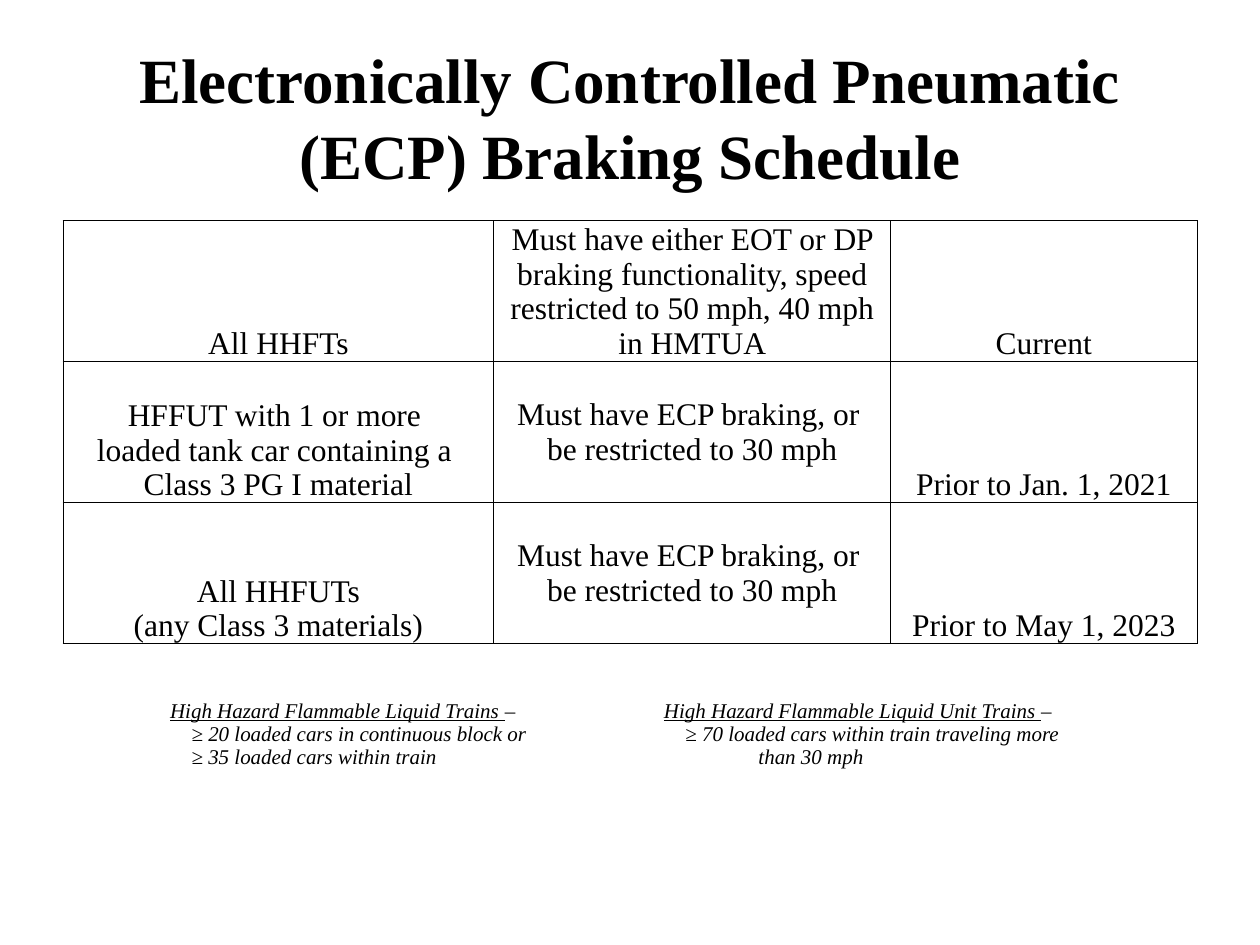
from lxml.etree import SubElement
from pptx import Presentation
from pptx.dml.color import RGBColor
from pptx.enum.text import MSO_ANCHOR as Anchor, PP_ALIGN as Align
from pptx.oxml.ns import qn
from pptx.util import Inches, Pt

FONT = "Times New Roman"
BLACK = "000000"
SCHEDULE = [
    ["All HHFTs",
     "Must have either EOT or DP braking functionality, speed restricted to 50 mph, 40 mph in HMTUA",
     "Current"],
    ["HFFUT with 1 or more \nloaded tank car containing a \nClass 3 PG I material",
     "Must have ECP braking, or \nbe restricted to 30 mph",
     "Prior to Jan. 1, 2021"],
    ["All HHFUTs\n(any Class 3 materials)",
     "Must have ECP braking, or \nbe restricted to 30 mph",
     "Prior to May 1, 2023"],
]
DEFINITIONS = [
    ("High Hazard Flammable Liquid Trains ",
     ["≥ 20 loaded cars in continuous block or", "≥ 35 loaded cars within train"]),
    ("High Hazard Flammable Liquid Unit Trains ",
     ["≥ 70 loaded cars within train traveling more\vthan 30 mph"]),
]


def color(hex_code):
    """Return the colour for a hex string."""
    return RGBColor.from_string(hex_code)


def write(paragraph, text, size=18, align=Align.LEFT, **style):
    """Add text to a paragraph, formatted by keyword."""
    paragraph.alignment = align
    for position, line in enumerate(text.split("\v")):
        if position:
            paragraph.add_line_break()
        run = paragraph.add_run()
        run.text = line
        run.font.name = FONT
        run.font.size = Pt(size)
        run.font.color.rgb = color(BLACK)
        for key, value in style.items():
            setattr(run.font, key, value)


def hang(paragraph, first, rest):
    """Indent the first line and the following lines of a paragraph."""
    properties = paragraph._p.get_or_add_pPr()
    properties.set("marL", str(Inches(rest)))
    properties.set("indent", str(Inches(first) - Inches(rest)))


def set_borders(cell, width):
    """Rule all four sides of a cell, before its fill is set."""
    properties = cell._tc.get_or_add_tcPr()
    for side in ("lnL", "lnR", "lnT", "lnB"):
        line = SubElement(properties, qn(f"a:{side}"), w=str(Pt(width)))
        fill = SubElement(line, qn("a:solidFill"))
        SubElement(fill, qn("a:srgbClr"), val=BLACK)


def add_plain_table(slide, left, top, widths, heights):
    """Add a table without header or banding."""
    table = slide.shapes.add_table(
        len(heights), len(widths), Inches(left), Inches(top),
        Inches(sum(widths)), Inches(sum(heights))).table
    table.first_row = table.horz_banding = False
    for column, width in zip(table.columns, widths):
        column.width = Inches(width)
    for row, height in zip(table.rows, heights):
        row.height = Inches(height)
    return table


def add_title(slide, text):
    """Place and fill the title."""
    title = slide.shapes.title
    title.left, title.top = Inches(0.5), Inches(0.3)
    title.width, title.height = Inches(9), Inches(1.25)
    title.text_frame.vertical_anchor = Anchor.MIDDLE
    write(title.text_frame.paragraphs[0], text, size=36, align=Align.CENTER, bold=True)


def add_schedule(slide):
    """Add the ruled braking schedule."""
    table = add_plain_table(slide, 0.5, 1.75, [3.42, 3.15, 2.43], [1.12] * 3)
    for row, entries in enumerate(SCHEDULE):
        for column, entry in enumerate(entries):
            cell = table.cell(row, column)
            set_borders(cell, 0.5)
            cell.fill.background()
            cell.vertical_anchor = Anchor.BOTTOM
            cell.margin_left = cell.margin_right = cell.margin_top = Inches(0.01)
            cell.margin_bottom = Inches(0.28 if row and column == 1 else 0)
            frame = cell.text_frame
            for position, line in enumerate(entry.split("\n")):
                paragraph = frame.add_paragraph() if position else frame.paragraphs[0]
                write(paragraph, line, align=Align.CENTER)


def add_definitions(slide):
    """Add the two definitions side by side."""
    table = add_plain_table(slide, 1.25, 5.5, [3.92] * 2, [0.7])
    for column, (term, criteria) in enumerate(DEFINITIONS):
        cell = table.cell(0, column)
        cell.fill.background()
        heading = cell.text_frame.paragraphs[0]
        write(heading, term, size=12, italic=True, underline=True)
        write(heading, "–", size=12, italic=True)
        for criterion in criteria:
            paragraph = cell.text_frame.add_paragraph()
            hang(paragraph, 0.17, 0.75)
            write(paragraph, criterion, size=12, italic=True)


def main():
    """Build and save the slide."""
    deck = Presentation()
    deck.slide_width, deck.slide_height = Inches(10), Inches(7.5)
    slide = deck.slides.add_slide(deck.slide_layouts[5])
    add_title(slide, "Electronically Controlled Pneumatic (ECP) Braking Schedule")
    add_schedule(slide)
    add_definitions(slide)
    deck.save("out.pptx")


if __name__ == "__main__":
    main()
